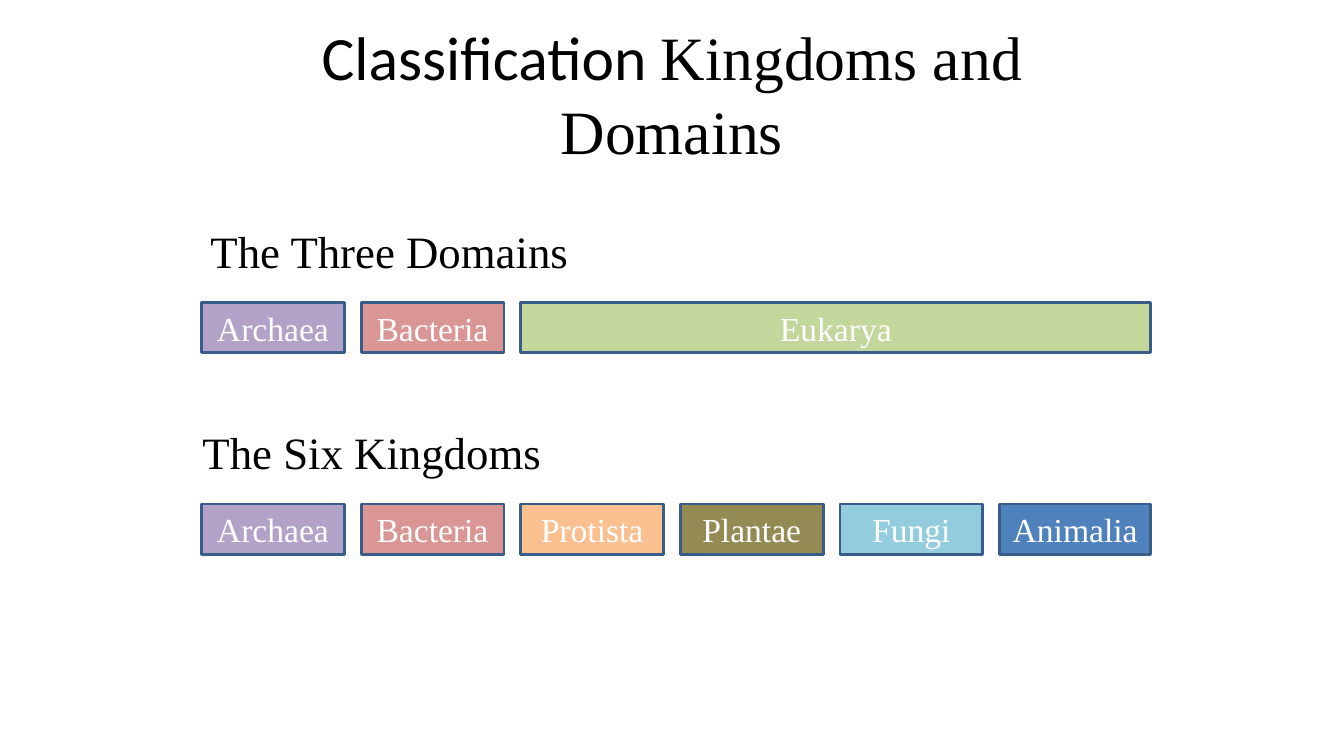
from dataclasses import dataclass

from pptx import Presentation
from pptx.dml.color import RGBColor
from pptx.enum.shapes import MSO_SHAPE
from pptx.enum.text import MSO_ANCHOR, MSO_AUTO_SIZE, PP_ALIGN
from pptx.util import Pt


@dataclass(frozen=True)
class Theme:
    title_font: str = "Calibri"
    body_font: str = "Times New Roman"
    title_size: int = 44
    heading_size: int = 32
    box_size: int = 24
    text: str = "000000"
    box_text: str = "FFFFFF"
    outline: str = "385D8A"
    archaea: str = "B3A2C7"
    bacteria: str = "D99694"
    eukarya: str = "C3D69B"
    protista: str = "FAC090"
    plantae: str = "948A54"
    fungi: str = "93CDDD"
    animalia: str = "4F81BD"


THEME = Theme()
ROW_LEFT = 144
ROW_RIGHT = 822
BOX_WIDTH = 102
BOX_HEIGHT = 36
BOX_GAP = 12

DOMAINS = [
    ("Archaea", THEME.archaea),
    ("Bacteria", THEME.bacteria),
    ("Eukarya", THEME.eukarya),
]
KINGDOMS = [
    ("Archaea", THEME.archaea),
    ("Bacteria", THEME.bacteria),
    ("Protista", THEME.protista),
    ("Plantae", THEME.plantae),
    ("Fungi", THEME.fungi),
    ("Animalia", THEME.animalia),
]


def format_run(run, font_name, size, color):
    run.font.name = font_name
    run.font.size = Pt(size)
    run.font.color.rgb = RGBColor.from_string(color)


def add_title(slide, parts):
    """Fill the title placeholder with (text, font name) parts."""
    title = slide.shapes.title
    title.left, title.top, title.width, title.height = Pt(156), Pt(21.6), Pt(648), Pt(90)
    text_frame = title.text_frame
    text_frame.word_wrap = True
    text_frame.auto_size = MSO_AUTO_SIZE.NONE
    text_frame.vertical_anchor = MSO_ANCHOR.MIDDLE
    paragraph = text_frame.paragraphs[0]
    paragraph.alignment = PP_ALIGN.CENTER
    for text, font_name in parts:
        run = paragraph.add_run()
        run.text = text
        format_run(run, font_name, THEME.title_size, THEME.text)


def add_heading(slide, text, left, top, width):
    text_box = slide.shapes.add_textbox(Pt(left), Pt(top), Pt(width), Pt(45))
    text_frame = text_box.text_frame
    text_frame.text = text
    text_frame.word_wrap = False
    text_frame.auto_size = MSO_AUTO_SIZE.SHAPE_TO_FIT_TEXT
    format_run(text_frame.paragraphs[0].runs[0], THEME.body_font, THEME.heading_size, THEME.text)


def add_group_box(slide, name, color, left, top, width):
    shape = slide.shapes.add_shape(
        MSO_SHAPE.RECTANGLE, Pt(left), Pt(top), Pt(width), Pt(BOX_HEIGHT)
    )
    shape.shadow.inherit = False
    shape.fill.solid()
    shape.fill.fore_color.rgb = RGBColor.from_string(color)
    shape.line.color.rgb = RGBColor.from_string(THEME.outline)
    shape.line.width = Pt(2)
    text_frame = shape.text_frame
    text_frame.text = name
    text_frame.word_wrap = True
    text_frame.vertical_anchor = MSO_ANCHOR.MIDDLE
    paragraph = text_frame.paragraphs[0]
    paragraph.alignment = PP_ALIGN.CENTER
    format_run(paragraph.runs[0], THEME.body_font, THEME.box_size, THEME.box_text)


def add_group_row(slide, groups, top):
    """Place equal boxes in a row; the last one extends to the right edge."""
    for index, (name, color) in enumerate(groups):
        left = ROW_LEFT + index * (BOX_WIDTH + BOX_GAP)
        is_last = index == len(groups) - 1
        width = ROW_RIGHT - left if is_last else BOX_WIDTH
        add_group_box(slide, name, color, left, top, width)


def main():
    presentation = Presentation()
    presentation.slide_width = Pt(960)
    presentation.slide_height = Pt(540)
    title_only_layout = presentation.slide_layouts[5]
    slide = presentation.slides.add_slide(title_only_layout)

    add_title(slide, [
        ("Classification ", THEME.title_font),
        ("Kingdoms and Domains", THEME.body_font),
    ])
    add_group_row(slide, DOMAINS, top=216)
    add_group_row(slide, KINGDOMS, top=360)
    add_heading(slide, "The Three Domains", left=143.3, top=156, width=272)
    add_heading(slide, "The Six Kingdoms", left=137.5, top=300, width=258.5)

    presentation.save("out.pptx")


if __name__ == "__main__":
    main()
